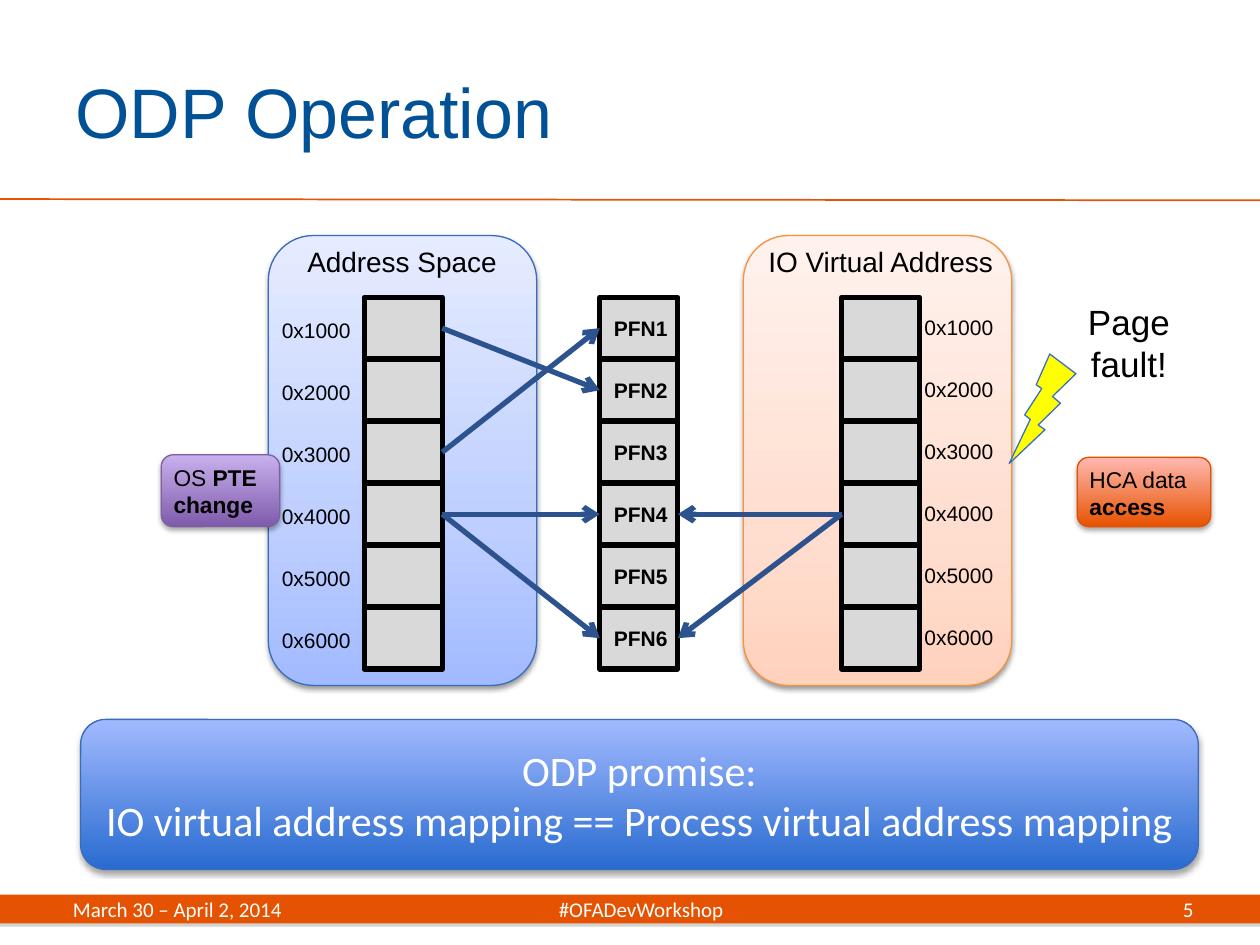
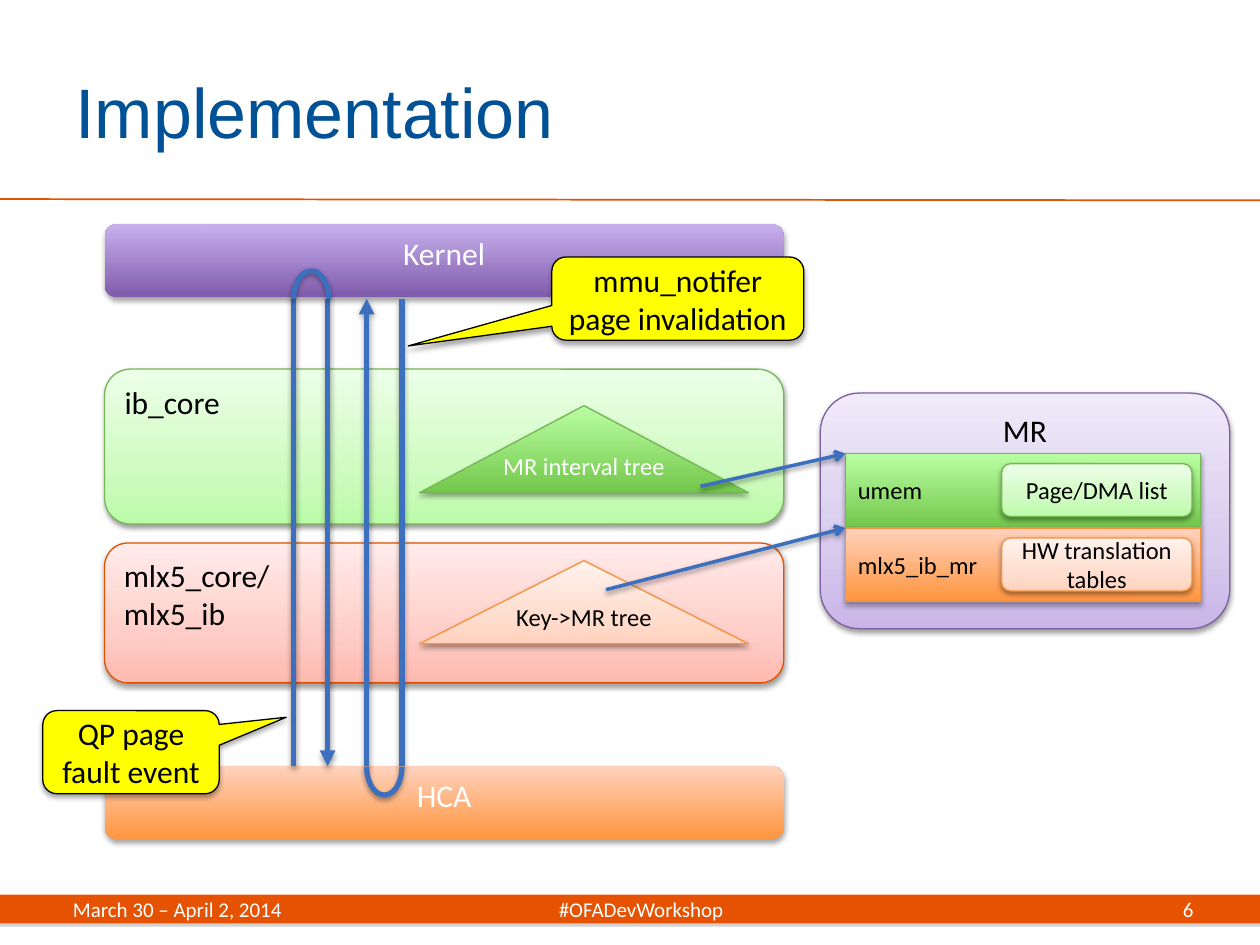
from dataclasses import dataclass
from typing import Any, Optional

from lxml.etree import SubElement
from pptx import Presentation
from pptx.dml.color import RGBColor
from pptx.enum.shapes import MSO_CONNECTOR, MSO_SHAPE
from pptx.enum.text import MSO_ANCHOR, PP_ALIGN
from pptx.oxml.ns import qn
from pptx.util import Inches, Pt

# Shared colours and fonts
ORANGE, NAVY, BLUE, GREY = "E55302", "2D538E", "3C6FBD", "D9D9D9"
BLACK, WHITE, YELLOW = "000000", "FFFFFF", "FFFF00"
ARIAL, BODY = "Arial", "Calibri"
LEFT, MID, RIGHT = PP_ALIGN.LEFT, PP_ALIGN.CENTER, PP_ALIGN.RIGHT
TOP, CENTRE, BOTTOM = MSO_ANCHOR.TOP, MSO_ANCHOR.MIDDLE, MSO_ANCHOR.BOTTOM
ROUND, RECT = MSO_SHAPE.ROUNDED_RECTANGLE, MSO_SHAPE.RECTANGLE


@dataclass(frozen=True)
class Shadow:
    color: str
    alpha: int
    blur: float
    dist: float


SOFT = Shadow(BLACK, 38, 3.1, 1.6)
HARD = Shadow(BLACK, 35, 3.1, 1.8)


@dataclass(frozen=True)
class Look:
    """Fill is a colour, or gradient stops running from bottom to top."""
    fill: Any = None
    edge: Optional[str] = None
    width: float = 0.75
    shadow: Optional[Shadow] = None


def pale(low: str, mid: str, high: str, edge: str) -> Look:
    return Look(((0, low), (35, mid), (100, high)), edge, shadow=SOFT)


def deep(low: str, high: str, edge: Optional[str] = None) -> Look:
    return Look(((0, low), (100, high)), edge, shadow=HARD)


PALE_BLUE = pale("A2BAFF", "BDCEFF", "E6ECFF", "386CBC")
PALE_PEACH = pale("FFD2BD", "FFDED0", "FFF2ED", "F69240")
PALE_GREEN = pale("BCFBA8", "D0FBC2", "ECFFE7", "75B755")
PALE_RED = pale("FFB9B0", "FFCDC7", "FFECEA", "E25100")
PALE_PLUM = pale("C9B5E8", "D8CBEE", "F0EAF9", "7D60A0")
DEEP_BLUE = deep("296BD0", "A2BAFF", "386CBC")
DEEP_RED = deep("E75200", "FFB9B0", "E25100")
DEEP_PLUM = deep("7F5BAB", "C8B0ED", "7D60A0")
DEEP_GREEN = deep("73C74B", "BAFFA4", "75B755")
DEEP_PEACH = deep("FF953E", "FFD2BD", "F69240")
PLUM_BAR = deep("7F5BAB", "C8B0ED")
PEACH_BAR = deep("FF953E", "FFD2BD")
CELL = Look(GREY, BLACK, 3)
NOTE = Look(YELLOW, BLACK, shadow=HARD)
LOOP = Look(None, BLUE, 3, SOFT)
BAND = Look(ORANGE, shadow=Shadow("808080", 35, 0, 1.8))


@dataclass(frozen=True)
class Text:
    """Lines are split by newlines; ** toggles bold."""
    words: str
    size: float = 18
    color: str = BLACK
    font: str = BODY
    align: Any = MID
    anchor: Any = CENTRE
    inset: tuple = (0.1, 0.05, 0.1, 0.05)
    wrap: bool = True
    tab: Optional[float] = None


@dataclass(frozen=True)
class Part:
    """A preset shape, or a text box when kind is None."""
    kind: Any
    box: tuple
    look: Look = Look()
    text: Optional[Text] = None
    adj: tuple = ()
    turn: float = 0
    flip: bool = False


def rgb(code: str) -> RGBColor:
    return RGBColor.from_string(code)


def put(item: Any, vals: dict) -> None:
    for name, val in vals.items():
        setattr(item, name, val)


def place(item: Any, box: tuple) -> None:
    put(item, dict(zip(("left", "top", "width", "height"), map(Inches, box))))


def node(parent: Any, tag: str, **vals: Any) -> Any:
    return SubElement(parent, qn(tag), {k: str(v) for k, v in vals.items()})


def shade(item: Any, shadow: Optional[Shadow]) -> None:
    """Set the effect list; call after the line is set."""
    effects = node(item.element.spPr, "a:effectLst")
    if shadow:
        outer = node(effects, "a:outerShdw", blurRad=Pt(shadow.blur), dist=Pt(shadow.dist),
                     dir=90 * 60000, rotWithShape=0)
        tint = node(outer, "a:srgbClr", val=shadow.color)
        node(tint, "a:alpha", val=shadow.alpha * 1000)


def paint(item: Any, look: Look) -> None:
    if look.fill is None:
        item.fill.background()
    elif isinstance(look.fill, str):
        item.fill.solid()
        item.fill.fore_color.rgb = rgb(look.fill)
    else:
        item.fill.gradient()
        item.fill.gradient_angle = 90
        stops = item.element.spPr.find(".//" + qn("a:gsLst"))
        stops.clear()
        for pos, code in look.fill:
            node(node(stops, "a:gs", pos=pos * 1000), "a:srgbClr", val=code)
    if look.edge:
        item.line.color.rgb = rgb(look.edge)
        item.line.width = Pt(look.width)
    else:
        item.line.fill.background()
    shade(item, look.shadow)


def write(frame: Any, text: Text) -> None:
    sides = ("margin_left", "margin_top", "margin_right", "margin_bottom")
    put(frame, dict(zip(sides, map(Inches, text.inset))))
    put(frame, {"word_wrap": text.wrap, "vertical_anchor": text.anchor})
    for num, line in enumerate(text.words.split("\n")):
        para = frame.add_paragraph() if num else frame.paragraphs[0]
        para.alignment = text.align
        if text.tab:
            tabs = node(para._p.get_or_add_pPr(), "a:tabLst")
            node(tabs, "a:tab", pos=Inches(text.tab), algn="ctr")
        for turn, words in enumerate(line.split("**")):
            if words:
                run = para.add_run()
                run.text = words
                put(run.font, {"name": text.font, "size": Pt(text.size), "bold": turn % 2 == 1})
                run.font.color.rgb = rgb(text.color)


def draw(shapes: Any, part: Part) -> Any:
    box = tuple(map(Inches, part.box))
    if part.kind is None:
        item = shapes.add_textbox(*box)
    else:
        item = shapes.add_shape(part.kind, *box)
        paint(item, part.look)
        item.rotation = part.turn
        for num, val in enumerate(part.adj):
            item.adjustments[num] = val
        if part.flip:
            item.element.spPr.find(qn("a:xfrm")).set("flipH", "1")
    if part.text:
        write(item.text_frame, part.text)
    return item


def link(shapes: Any, start: tuple, end: tuple, color: str, width: float, head: str = "",
         tail: str = "", shadow: Optional[Shadow] = None) -> Any:
    line = shapes.add_connector(MSO_CONNECTOR.STRAIGHT, *map(Inches, start + end))
    line.line.color.rgb = rgb(color)
    line.line.width = Pt(width)
    edge = line.element.spPr.find(qn("a:ln"))
    for tag, kind in (("a:headEnd", head), ("a:tailEnd", tail)):
        if kind:
            node(edge, tag, type=kind)
    shade(line, shadow)
    return line


def start(deck: Any, title: str, page: int) -> Any:
    """Add a slide with its title, rule, band and footer."""
    slide = deck.slides.add_slide(deck.slide_layouts[5])
    place(slide.shapes.title, (0.5, 0.25, 8.17, 1.25))
    write(slide.shapes.title.text_frame, Text(title, 40, "005195", ARIAL, LEFT))
    draw(slide.shapes, Part(RECT, (0, 7.1, 10, 0.23), BAND))
    link(slide.shapes, (0, 1.58), (10, 1.59), ORANGE, 1)
    foot = Text("March 30 – April 2, 2014\t#OFADevWorkshop", 12, WHITE, align=LEFT, tab=4.51)
    draw(slide.shapes, Part(None, (0.48, 7.1, 9.05, 0.23), text=foot))
    draw(slide.shapes, Part(None, (8.38, 7.1, 1.19, 0.23),
                            text=Text(str(page), 12, WHITE, align=RIGHT)))
    return slide.shapes


def label(words: str, box: tuple, size: float = 12, wrap: bool = True) -> Part:
    return Part(None, box, text=Text(words, size, font=ARIAL, inset=(0, 0, 0, 0), wrap=wrap))


def odp(deck: Any) -> None:
    shapes = start(deck, "ODP Operation", 5)
    rows, first, high = 6, 2.36, 0.49
    step = (4.82 - first) / (rows - 1)

    # Two spaces with their headings
    for left, look in ((2.13, PALE_BLUE), (5.9, PALE_PEACH)):
        draw(shapes, Part(ROUND, (left, 1.87, 2.13, 3.57), look))
    draw(shapes, label("Address Space", (2.43, 1.94, 1.52, 0.27), 16, False))
    draw(shapes, label("IO Virtual Address", (6.09, 1.94, 1.8, 0.27), 16, False))

    # Page columns and their addresses
    def column(left: float, name: str = "") -> list:
        cells = []
        for row in range(rows):
            text = Text(f"**{name}{row + 1}**", 12, font=ARIAL, inset=(0.03, 0, 0, 0))
            box = (left, first + row * step, 0.62, high)
            cells.append(draw(shapes, Part(RECT, box, CELL, text if name else None)))
        return cells

    host, frames, device = column(2.89), column(4.76, "PFN"), column(6.68)
    for left, top in ((2.22, 2.52), (7.32, 2.5)):
        for row in range(rows):
            draw(shapes, label(f"0x{row + 1}000", (left, top + row * step, 0.58, 0.2)))

    # Page mappings: column, row, frame, side left, side reached
    maps = ((host, 0, 1, 3, 1), (host, 2, 0, 3, 1), (host, 3, 3, 3, 1), (host, 3, 5, 3, 1),
            (device, 3, 3, 1, 3), (device, 3, 5, 1, 3))
    for cells, row, frame, out, into in maps:
        arrow = link(shapes, (0, 0), (1, 1), NAVY, 3, tail="arrow")
        arrow.begin_connect(cells[row], out)
        arrow.end_connect(frames[frame], into)

    # Events
    tight = (0.07, 0.04, 0.07, 0.04)
    for words, box, look in (("HCA data\n**access**", (8.55, 3.63, 1.06, 0.55), DEEP_RED),
                             ("OS **PTE change**", (1.28, 3.61, 0.94, 0.57), DEEP_PLUM)):
        draw(shapes, Part(ROUND, box, look, Text(words, 13, BLACK, ARIAL, LEFT, TOP, tight)))
    draw(shapes, Part(MSO_SHAPE.LIGHTNING_BOLT, (8.01, 2.81, 0.53, 0.87),
                      Look(YELLOW, BLUE), flip=True))
    draw(shapes, label("Page fault!", (8.43, 2.38, 1.06, 0.68), 20))

    # Promise
    vow = "ODP promise:\nIO virtual address mapping == Process virtual address mapping"
    draw(shapes, Part(ROUND, (0.64, 5.71, 8.87, 1.19), DEEP_BLUE, Text(vow, 24, WHITE)))


def build(deck: Any) -> None:
    shapes = start(deck, "Implementation", 6)

    # Stack layers
    for words, top, high, look, color, align in (
            ("ib_core", 2.93, 1.23, PALE_GREEN, BLACK, LEFT),
            ("mlx5_core/\nmlx5_ib", 4.31, 1.11, PALE_RED, BLACK, LEFT),
            ("HCA", 6.08, 0.58, PEACH_BAR, WHITE, MID),
            ("Kernel", 1.78, 0.58, PLUM_BAR, WHITE, MID)):
        text = Text(words, color=color, align=align, anchor=TOP)
        draw(shapes, Part(ROUND, (0.83, top, 5.39, high), look, text))

    # Trees
    for words, top, high, look, color, anchor in (
            ("Key->MR tree", 4.45, 0.66, PALE_PEACH, BLACK, CENTRE),
            ("MR interval tree", 3.22, 0.69, DEEP_GREEN, WHITE, BOTTOM)):
        text = Text(words, 14, color, anchor=anchor, inset=(0, 0, 0, 0.1))
        draw(shapes, Part(MSO_SHAPE.ISOSCELES_TRIANGLE, (3.33, top, 2.61, high), look, text))

    # Memory region panel
    panel = shapes.add_group_shape().shapes
    draw(panel, Part(ROUND, (6.51, 3.12, 3.25, 1.87), PALE_PLUM, Text("MR", anchor=TOP)))
    for words, inner, top, look, light in (
            ("umem", "Page/DMA list", 3.6, DEEP_GREEN, PALE_GREEN),
            ("mlx5_ib_mr", "HW translation tables", 4.19, DEEP_PEACH, PALE_PEACH)):
        draw(panel, Part(RECT, (6.71, top, 2.82, 0.58), look, Text(words, 14, align=LEFT)))
        draw(panel, Part(ROUND, (7.95, top + 0.08, 1.51, 0.42), light, Text(inner, 14)))
    for begin, end in (((5.56, 3.86), (6.71, 3.6)), ((4.81, 4.68), (6.71, 4.19))):
        link(shapes, begin, end, BLUE, 2, tail="arrow", shadow=SOFT)

    # Round trips between kernel and HCA
    for left, head, tail in ((2.33, "", ""), (2.6, "triangle", ""),
                             (2.91, "", "triangle"), (3.19, "", "")):
        link(shapes, (left, 6.08), (left, 2.37), BLUE, 3, head, tail, SOFT)
    for left, top, turn in ((2.33, 2.15, 0), (2.91, 5.86, 180)):
        draw(shapes, Part(MSO_SHAPE.ARC, (left, top, 0.28, 0.45), LOOP, adj=(108.19, 0), turn=turn))

    # Callouts
    for words, box, adj in (
            ("QP page fault event", (0.34, 5.64, 1.4, 0.66), (0.88, -0.42, 0.17)),
            ("mmu_notifer page invalidation", (4.38, 2.04, 2, 0.66), (-1.07, 0.57, 0.17))):
        draw(shapes, Part(MSO_SHAPE.ROUNDED_RECTANGULAR_CALLOUT, box, NOTE, Text(words), adj))


def main() -> None:
    deck = Presentation()
    put(deck, {"slide_width": Inches(10), "slide_height": Inches(7.5)})
    odp(deck)
    build(deck)
    deck.save("out.pptx")


if __name__ == "__main__":
    main()
